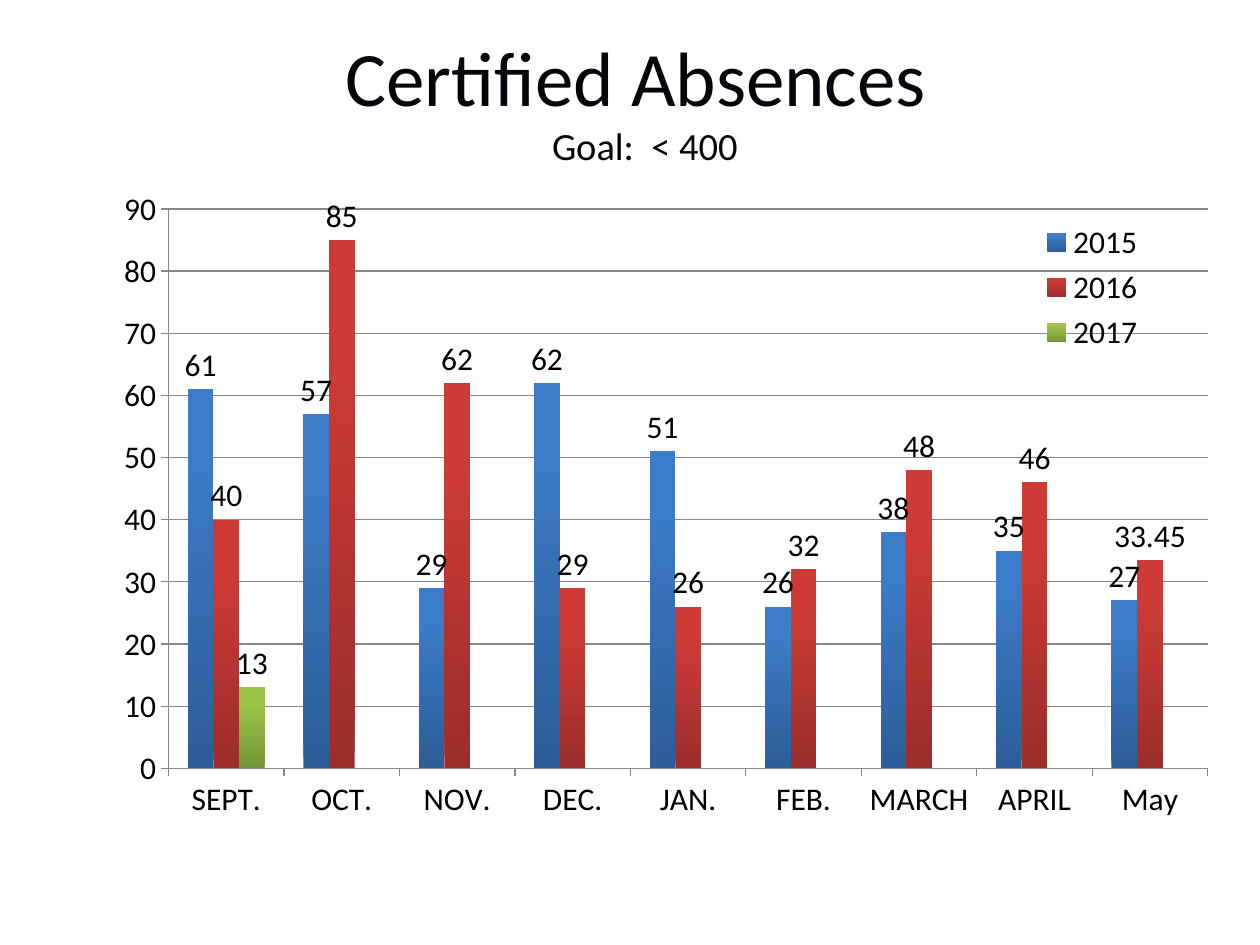
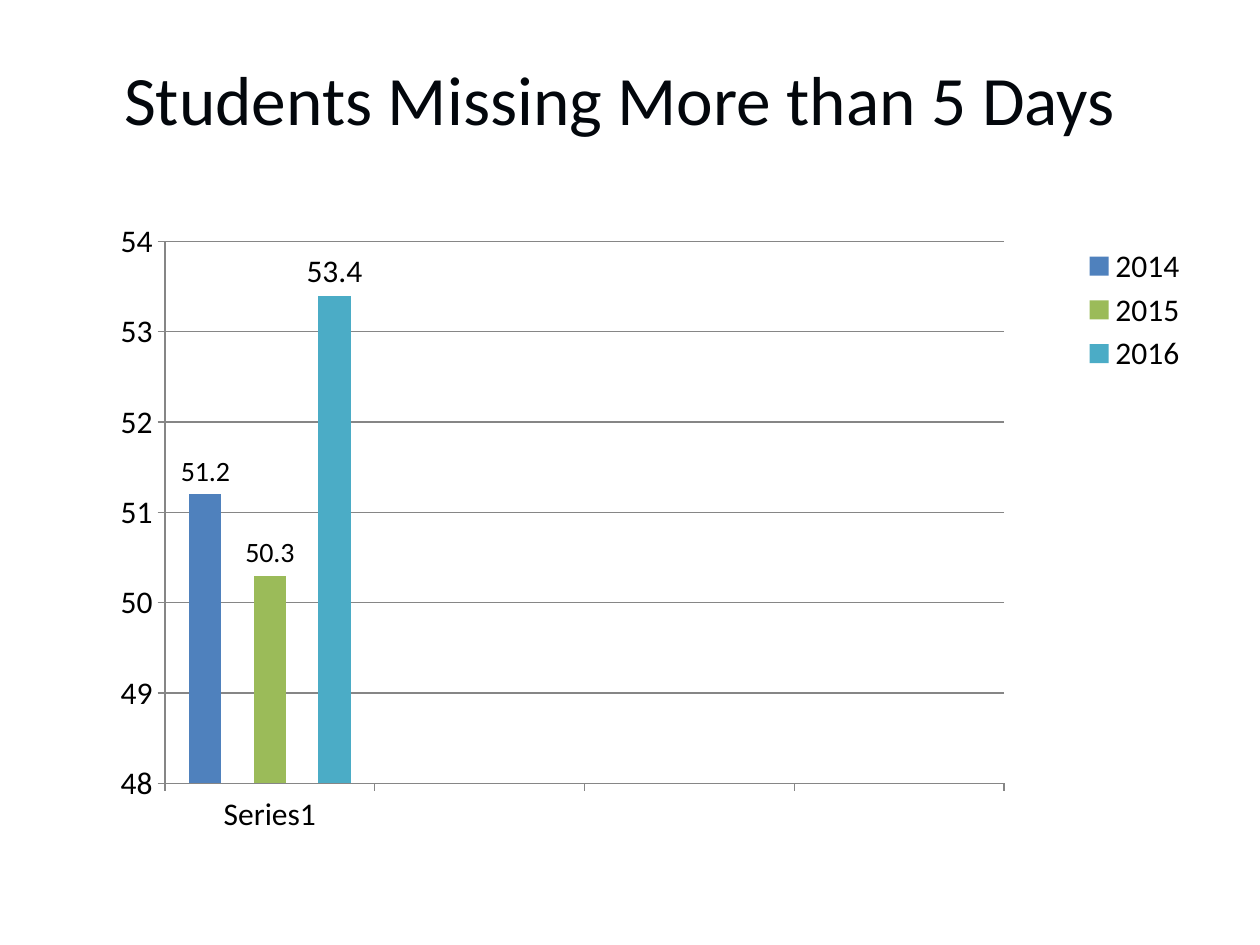
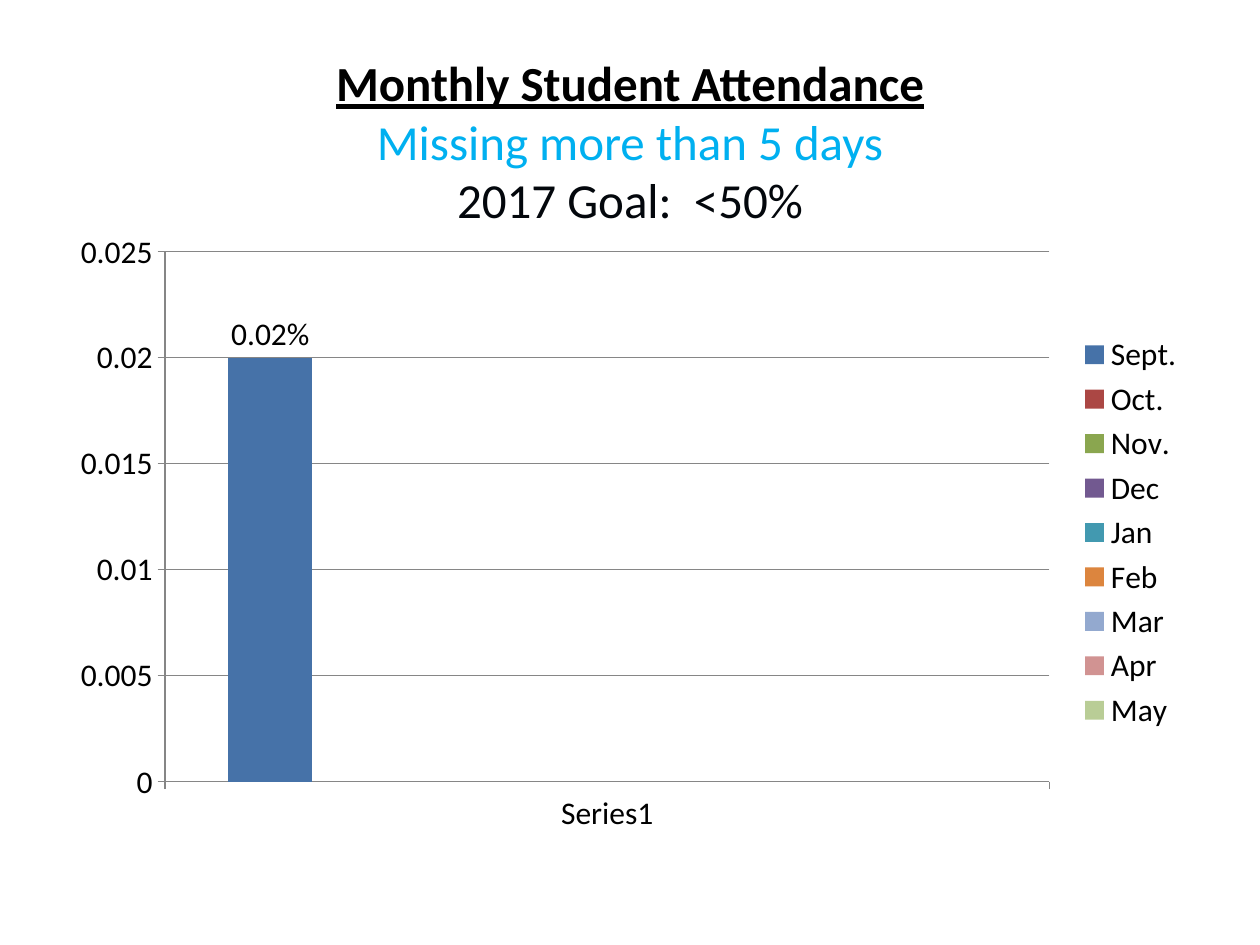
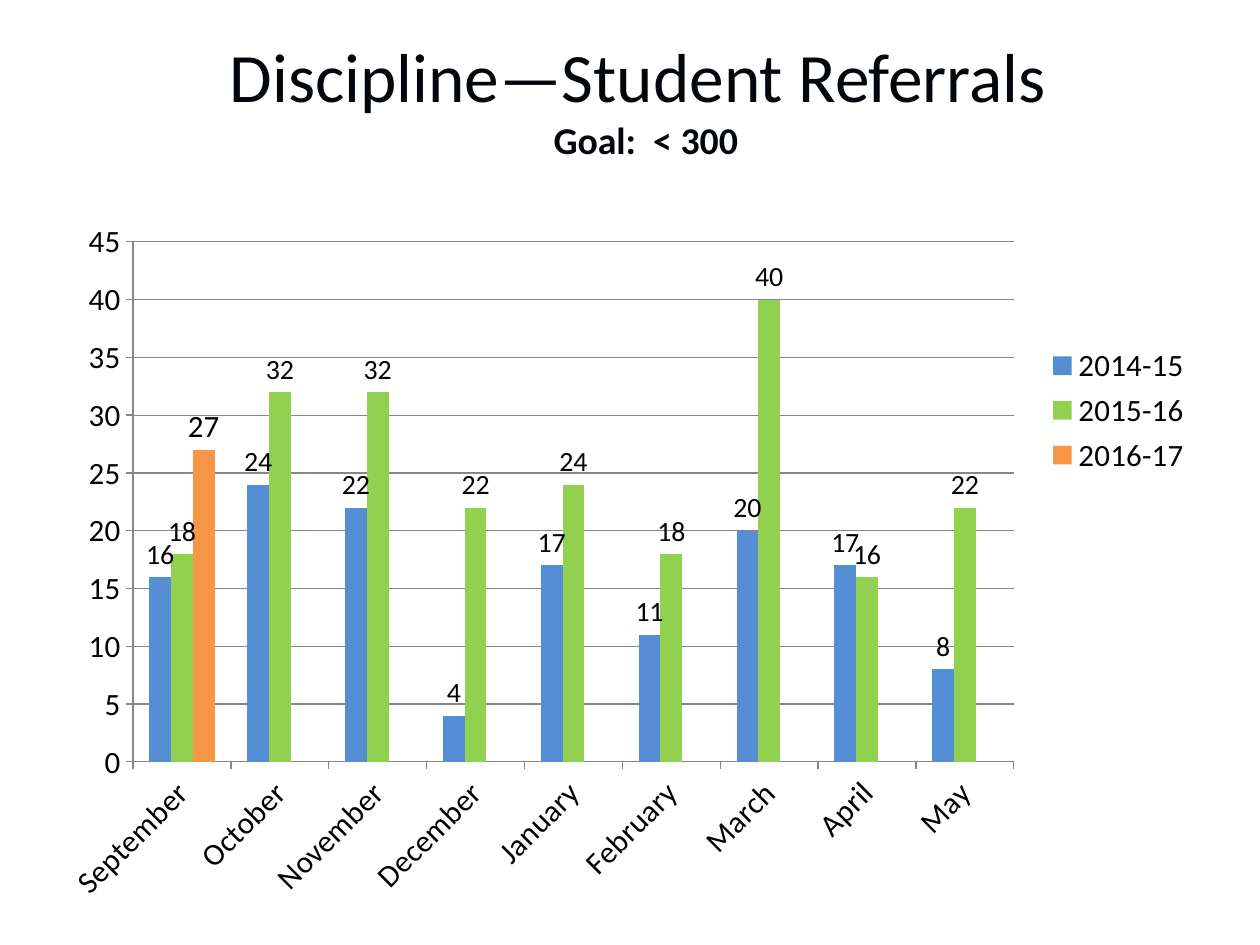
from lxml.etree import SubElement
from pptx import Presentation
from pptx.chart.data import CategoryChartData as ChartData
from pptx.dml.color import RGBColor
from pptx.enum.chart import XL_CHART_TYPE as CT, XL_LABEL_POSITION as LP
from pptx.enum.chart import XL_LEGEND_POSITION as LEG, XL_TICK_MARK as TICK
from pptx.enum.text import MSO_ANCHOR, MSO_AUTO_SIZE, PP_ALIGN
from pptx.oxml.ns import qn
from pptx.util import Cm, Pt

# Shared style
FONT = "Calibri"
INK, BLACK, SKY, GRID = "03070C", "000000", "00B0F0", "868686"
BLUE, RED, GREEN = ("2C5D98", "3C7BC7"), ("9B2D2A", "CE3B37"), ("769535", "9BC348")
TITLE_LAYOUT = 5
TITLE_HEIGHT = 3.18
RAISED = 1.04  # bottom inset (cm) that lifts a title above the box centre


def rgb(value):
    return RGBColor.from_string(value)


def set_font(font, size, color=BLACK, **extra):
    for name, value in {"name": FONT, "size": Pt(size), **extra}.items():
        setattr(font, name, value)
    font.color.rgb = rgb(color)


def add_title(slide, left, top, width, lines, inset=RAISED):
    """Lines are (text, format) pairs, parted by line breaks."""
    sp = slide.shapes.title
    place = {"left": left, "top": top, "width": width, "height": TITLE_HEIGHT}
    for name, value in place.items():
        setattr(sp, name, Cm(value))
    tf = sp.text_frame
    frame = {"word_wrap": True, "auto_size": MSO_AUTO_SIZE.NONE,
             "vertical_anchor": MSO_ANCHOR.MIDDLE, "margin_bottom": Cm(inset)}
    for name, value in frame.items():
        setattr(tf, name, value)
    p = tf.paragraphs[0]
    p.alignment = PP_ALIGN.CENTER
    for i, (text, fmt) in enumerate(lines):
        if i:
            p.add_line_break()
        r = p.add_run()
        r.text = text
        set_font(r.font, **{"color": INK, **fmt})


def make_layout(box, inner=False):
    """Return a manual chart layout; box is x, y, width, height as fractions."""
    layout = parent_free("c:layout")
    manual = SubElement(layout, qn("c:manualLayout"))
    if inner:
        SubElement(manual, qn("c:layoutTarget"), val="inner")
    for tag in ("xMode", "yMode"):
        SubElement(manual, qn("c:" + tag), val="edge")
    for tag, value in zip("xywh", box):
        SubElement(manual, qn("c:" + tag), val=str(value))
    return layout


def parent_free(tag):
    from pptx.oxml.xmlchemy import OxmlElement
    return OxmlElement(tag)


def drop_layout(element):
    for old in element.findall(qn("c:layout")):
        element.remove(old)


def style_axes(chart, size, scale, slant):
    cat, val = chart.category_axis, chart.value_axis
    for axis in (cat, val):
        axis.major_tick_mark = TICK.OUTSIDE
        axis.minor_tick_mark = TICK.NONE
        set_font(axis.tick_labels.font, size)
    val.minimum_scale, val.maximum_scale, val.major_unit = scale
    cat.has_major_gridlines = False
    val.has_major_gridlines = True
    for item in (cat, val, val.major_gridlines):
        item.format.line.color.rgb = rgb(GRID)
        item.format.line.width = Pt(0.75)
    if slant:
        body = chart.element.find(".//" + "/".join(
            qn(t) for t in ("c:catAx", "c:txPr", "a:bodyPr")))
        body.set("rot", str(slant * 60000))


def style_legend(chart, size, box, overlay, hidden):
    chart.has_legend = True
    chart.legend.position = LEG.RIGHT
    chart.legend.include_in_layout = overlay
    set_font(chart.legend.font, size)
    legend = chart.element.find(".//" + qn("c:legend"))
    drop_layout(legend)
    anchor = legend.find(qn("c:overlay"))
    for index in hidden:
        entry = parent_free("c:legendEntry")
        SubElement(entry, qn("c:idx"), val=str(index))
        SubElement(entry, qn("c:delete"), val="1")
        anchor.addprevious(entry)
    if box:
        anchor.addprevious(make_layout(box))


def style_series(series, color, label_size, label_format):
    fill = series.format.fill
    if isinstance(color, tuple):  # dark foot, light top
        fill.gradient()
        fill.gradient_angle = 90
        for stop, shade, pos in zip(fill.gradient_stops, color, (0, 0.8)):
            stop.color.rgb = rgb(shade)
            stop.position = pos
    else:
        fill.solid()
        fill.fore_color.rgb = rgb(color)
    series.invert_if_negative = False
    if label_size:
        labels = series.data_labels
        values = {"show_value": True, "position": LP.OUTSIDE_END,
                  "number_format": label_format, "number_format_is_linked": False}
        for name, value in values.items():
            setattr(labels, name, value)
        set_font(labels.font, label_size)


def add_columns(slide, place, cats, rows, scale, plot, size=18, legend=None,
                overlay=False, hidden=(), slant=0, label_format="General"):
    """Rows are (name, values, colour, label size) tuples."""
    data = ChartData()
    data.categories = cats
    for name, values, _, _ in rows:
        data.add_series(name, values + [None] * (len(cats) - len(values)))
    chart = slide.shapes.add_chart(
        CT.COLUMN_CLUSTERED, *(Cm(v) for v in place), data).chart
    chart.has_title = False
    set_font(chart.font, size)
    bars = chart.plots[0]
    bars.gap_width, bars.overlap, bars.vary_by_categories = 150, 0, False
    for series, (_, _, color, label_size) in zip(bars.series, rows):
        style_series(series, color, label_size, label_format)
    style_axes(chart, size, scale, slant)
    style_legend(chart, size, legend, overlay, hidden)
    area = chart.element.find(".//" + qn("c:plotArea"))
    drop_layout(area)
    area.insert(0, make_layout(plot, inner=True))


def absences(slide):
    add_title(slide, 4.01, 0.41, 17.98, [
        ("Certified Absences ", {"size": 44}),
        ("Goal:  < 400", {"size": 22})], inset=0.13)
    add_columns(
        slide, (1.07, 3.61, 23.29, 15.04),
        ["SEPT.", "OCT.", "NOV.", "DEC.", "JAN.", "FEB.", "MARCH", "APRIL", "May"],
        [("2015", [61, 57, 29, 62, 51, 26, 38, 35, 27], BLUE, 18),
         ("2016", [40, 85, 62, 29, 26, 32, 48, 46, 33.45], RED, 18),
         ("2017", [13], GREEN, 18)],
        (0, 90, 10), (0.1, 0.04, 0.9, 0.75),
        legend=(0.84, 0.05, 0.12, 0.19), overlay=True)


def missing_days(slide):
    add_title(slide, 0.43, 0.84, 24.13, [
        ("Students Missing More than 5 Days", {"size": 39.6})])
    add_columns(
        slide, (1.27, 4.24, 22.86, 12.57), ["Series1", "", "", ""],
        [("2014", [51.2], "4F81BD", 16),
         ("Series 2", [], "C0504D", None),
         ("2015", [50.3], "9BBB59", 16),
         ("Series 4", [], "8064A2", None),
         ("2016", [53.4], "4BACC6", 18)],
        (48, 54, 1), (0.09, 0.05, 0.74, 0.87),
        legend=(0.89, 0.05, 0.11, 0.22), hidden=(1, 3))


def attendance(slide):
    add_title(slide, 1.27, 1.7, 22.86, [
        ("Monthly Student Attendance",
         {"size": 28, "color": BLACK, "bold": True, "underline": True}),
        ("Missing more than 5 days", {"size": 28, "color": SKY}),
        ("2017 Goal:  <50%", {"size": 28})])
    months = ["Sept.", "Oct.", "Nov.", "Dec", "Jan", "Feb", "Mar", "Apr", "May"]
    colors = ["4672A8", "AB4744", "8AA64F", "725990", "4299B0",
              "DC853E", "93A9CF", "D19392", "B9CD96"]
    rows = [(month, [0.02] if month == "Sept." else [], color,
             18 if month == "Sept." else None)
            for month, color in zip(months, colors)]
    add_columns(slide, (1.27, 4.45, 22.86, 12.57), [""], rows,
                (0, 0.025, 0.005), (0.09, 0.05, 0.78, 0.85),
                label_format='0.00"%"')


def referrals(slide):
    add_title(slide, 2.54, 0.84, 20.96, [
        ("Discipline—Student Referrals ", {"size": 39.6}),
        ("Goal:  < 300", {"size": 21.6, "bold": True})])
    add_columns(
        slide, (1.07, 4.45, 23.06, 14.17),
        ["September", "October", "November", "December", "January",
         "February", "March", "April", "May"],
        [("2014-15", [16, 24, 22, 4, 17, 11, 20, 17, 8], "558ED5", 15.9),
         ("2015-16", [18, 32, 32, 22, 24, 18, 40, 16, 22], "92D050", 15.9),
         ("2016-17", [27], "F79646", 17.7)],
        (0, 45, 5), (0.07, 0.03, 0.77, 0.74), size=17.7,
        legend=(0.87, 0.17, 0.13, 0.2), slant=-45)


def main():
    prs = Presentation()
    prs.slide_width, prs.slide_height = Cm(25.4), Cm(19.05)
    for build in (absences, missing_days, attendance, referrals):
        build(prs.slides.add_slide(prs.slide_layouts[TITLE_LAYOUT]))
    prs.save("out.pptx")


if __name__ == "__main__":
    main()
